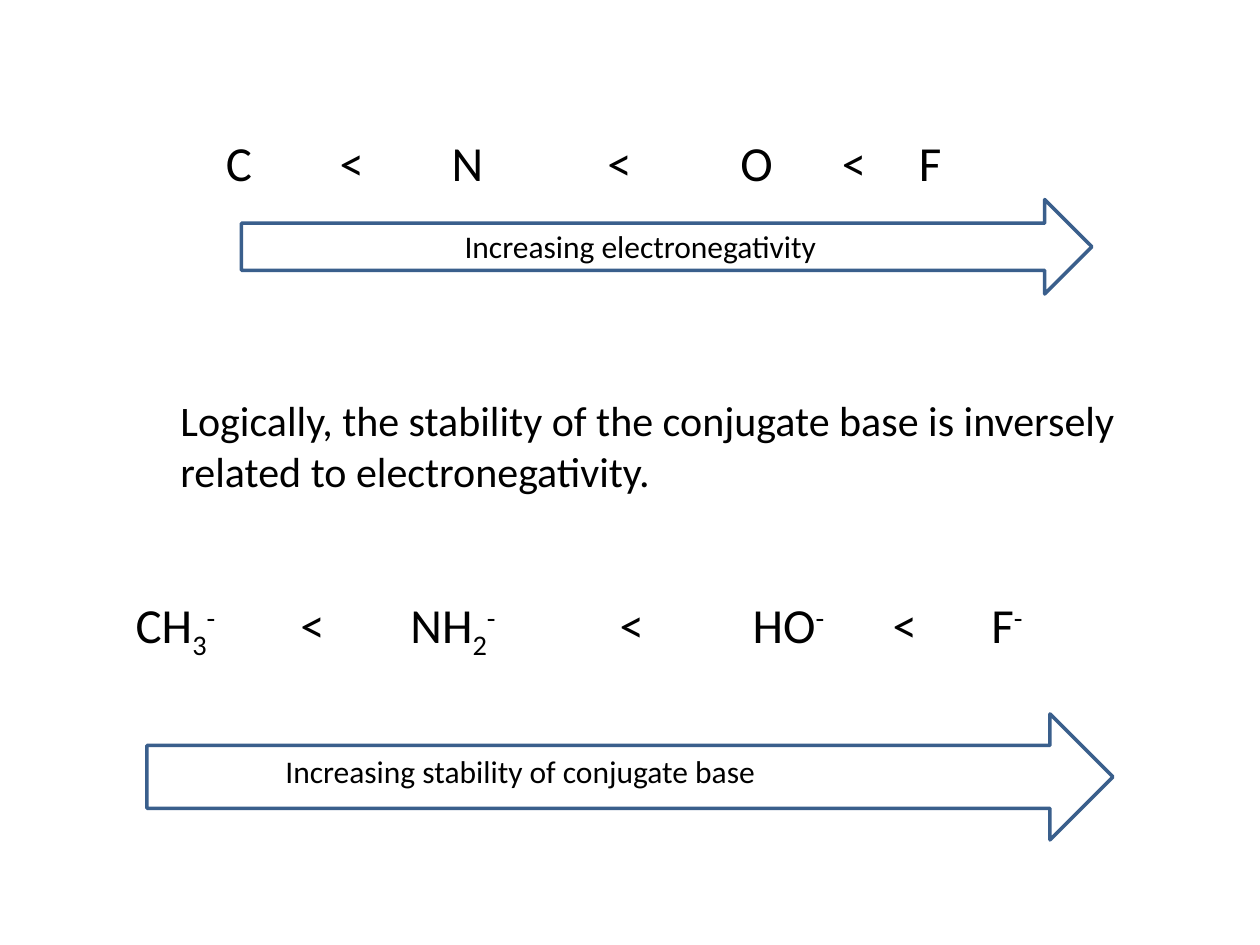
from lxml.etree import SubElement
from pptx import Presentation
from pptx.dml.color import RGBColor
from pptx.enum.shapes import MSO_SHAPE
from pptx.enum.text import PP_ALIGN
from pptx.oxml.ns import qn
from pptx.util import Pt

BLACK = RGBColor(0x00, 0x00, 0x00)
BLUE = RGBColor(0x3A, 0x5F, 0x8C)
FONT = "Calibri"
BASELINES = {"_": -25000, "^": 30000}


def add_text(s, box, text, size, align=PP_ALIGN.LEFT, wrap=True):
    tb = s.shapes.add_textbox(*map(Pt, box))
    tf = tb.text_frame
    tf.word_wrap = wrap
    tf.text = text
    p = tf.paragraphs[0]
    p.alignment = align
    for r in p.runs:
        style_run(r, size)
    return p


def style_run(r, size):
    r.font.name = FONT
    r.font.size = Pt(size)
    r.font.color.rgb = BLACK


def add_series(s, box, terms, stops):
    """Terms joined by "<", one tab stop each; "_" lowers and "^" raises the next character."""
    p = add_text(s, box, "", 28)
    tab_list = SubElement(p._p.get_or_add_pPr(), qn("a:tabLst"))
    for stop in stops:
        SubElement(tab_list, qn("a:tab"), pos=str(Pt(stop)), algn="l")

    pieces = [("\t", None)]
    for i, term in enumerate(terms):
        if i:
            pieces.append(("\t<\t", None))
        mark = None
        for char in term:
            if char in BASELINES:
                mark = char
            else:
                pieces.append((char, mark))
                mark = None

    text, current = "", None
    for piece, mark in pieces + [("", "end")]:
        if mark != current:
            if text:
                r = p.add_run()
                r.text = text
                style_run(r, 28)
                if current:
                    r._r.get_or_add_rPr().set("baseline", str(BASELINES[current]))
            text, current = "", mark
        text += piece


def add_trend_arrow(s, box, label, label_box, align, wrap=True):
    arrow = s.shapes.add_shape(MSO_SHAPE.RIGHT_ARROW, *map(Pt, box))
    arrow.shadow.inherit = False
    arrow.fill.background()
    arrow.line.color.rgb = BLUE
    arrow.line.width = Pt(2)
    add_text(s, label_box, label, 18, align, wrap)


def main():
    prs = Presentation()
    prs.slide_width, prs.slide_height = Pt(720), Pt(540)
    s = prs.slides.add_slide(prs.slide_layouts[6])

    add_series(s, (102, 72, 534, 41), ["C", "N", "O", "F"],
               [20, 85, 149, 238, 314, 372, 416])
    add_trend_arrow(s, (138, 114, 486, 54), "Increasing electronegativity",
                    (222, 126, 288, 29), PP_ALIGN.CENTER)
    add_text(s, (96, 222, 600, 65),
             "Logically, the stability of the conjugate base is inversely "
             "related to electronegativity.", 24)
    add_series(s, (60, 336, 612, 41), ["CH_3^-", "NH_2^-", "HO^-", "F^-"],
               [10.5, 104.5, 167.5, 287, 363, 443, 499.5])
    add_trend_arrow(s, (84, 408, 552, 72), "Increasing stability of conjugate base",
                    (156, 426, 286, 29), PP_ALIGN.LEFT, wrap=False)

    prs.save("out.pptx")


if __name__ == "__main__":
    main()
